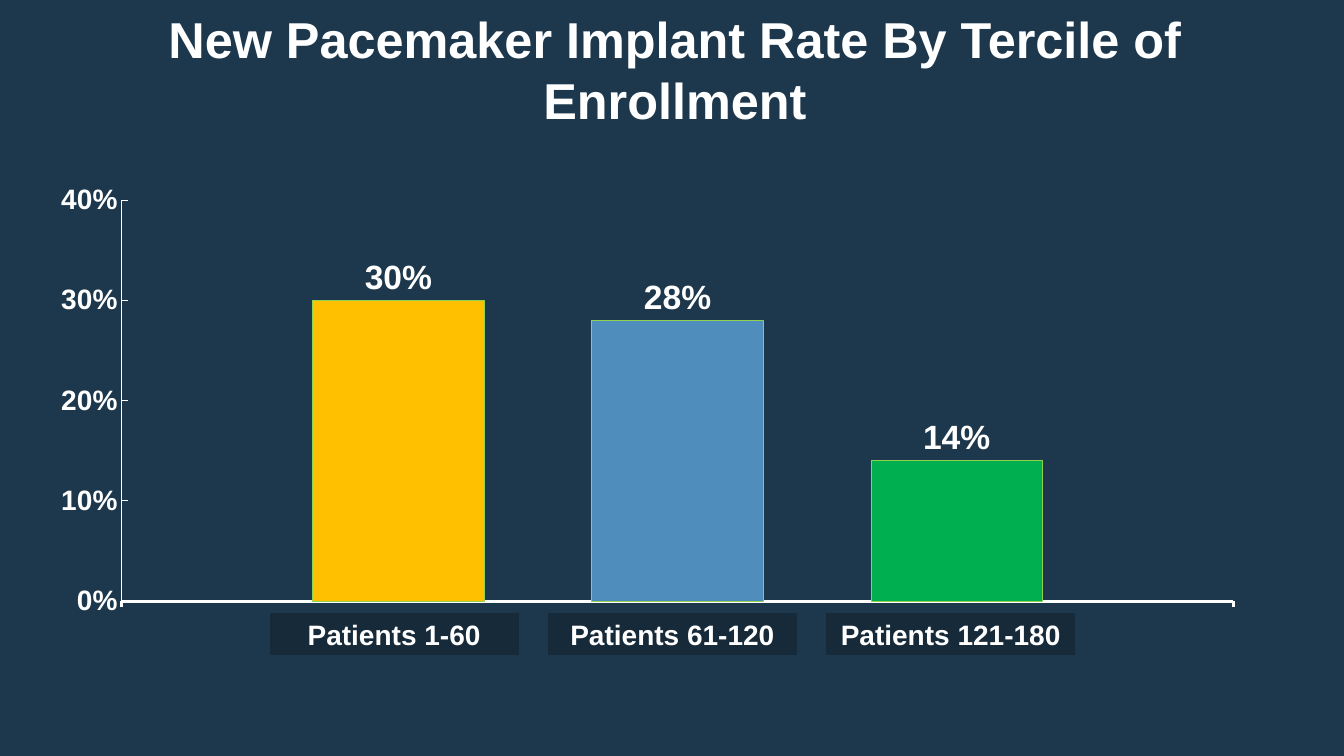
from lxml import etree
from pptx import Presentation
from pptx.chart import data
from pptx.dml import color
from pptx.enum import chart as ch, shapes, text
from pptx.oxml import ns
from pptx.util import Inches, Pt

TERCILES = [
    ("Patients 1-60", 0.30, "FFC000"),
    ("Patients 61-120", 0.28, "4F8EBC"),
    ("Patients 121-180", 0.14, "00B050"),
]


def rgb(value):
    return color.RGBColor.from_string(value)


class Deck:
    """Holds the slide and its style, and draws each kind of element."""

    font_name = "Arial"
    ink = "FFFFFF"
    ground = "1D384C"
    label_fill = "162A39"
    bar_edge = "92D050"

    def __init__(self):
        self.prs = Presentation()
        self.prs.slide_width = Inches(13.33)
        self.prs.slide_height = Inches(7.5)
        self.slide = self.prs.slides.add_slide(self.prs.slide_layouts[6])
        background = self.slide.background.fill
        background.solid()
        background.fore_color.rgb = rgb(self.ground)

    def style(self, font, size):
        font.name = self.font_name
        font.size = Pt(size)
        font.bold = True
        font.color.rgb = rgb(self.ink)

    def outline(self, line, hex_color, width):
        line.color.rgb = rgb(hex_color)
        line.width = Pt(width)

    def add_words(self, frame, words, size):
        frame.word_wrap = True
        frame.vertical_anchor = text.MSO_ANCHOR.MIDDLE
        paragraph = frame.paragraphs[0]
        paragraph.alignment = text.PP_ALIGN.CENTER
        run = paragraph.add_run()
        run.text = words
        self.style(run.font, size)

    def title(self, words, left, top, width, height):
        heading = self.slide.shapes.add_textbox(
            Inches(left), Inches(top), Inches(width), Inches(height))
        frame = heading.text_frame
        frame.margin_left = frame.margin_right = 0
        frame.margin_top = frame.margin_bottom = 0
        self.add_words(frame, words, 36)

    def label(self, words, left, top, width, height):
        tercile = self.slide.shapes.add_shape(
            shapes.MSO_SHAPE.RECTANGLE,
            Inches(left), Inches(top), Inches(width), Inches(height))
        tercile.shadow.inherit = False
        tercile.fill.solid()
        tercile.fill.fore_color.rgb = rgb(self.label_fill)
        self.outline(tercile.line, self.ground, 2)
        self.add_words(tercile.text_frame, words, 20)

    def place_plot(self, chart, **box):
        area = chart._chartSpace.chart.plotArea
        for old in area.findall(ns.qn("c:layout")):
            area.remove(old)
        layout = etree.Element(ns.qn("c:layout"))
        manual = etree.SubElement(layout, ns.qn("c:manualLayout"))
        settings = {"layoutTarget": "inner", "xMode": "edge", "yMode": "edge", **box}
        for tag, value in settings.items():
            etree.SubElement(manual, ns.qn(f"c:{tag}")).set("val", str(value))
        area.insert(0, layout)

    def rate_chart(self, terciles, left, top, width, height):
        rates = data.CategoryChartData(number_format="0%")
        rates.categories = [""]
        for number, (_, rate, _) in enumerate(terciles, 1):
            rates.add_series(f"Series {number}", [rate])
        chart = self.slide.shapes.add_chart(
            ch.XL_CHART_TYPE.COLUMN_CLUSTERED, Inches(left), Inches(top),
            Inches(width), Inches(height), rates).chart
        chart.has_legend = False
        chart.has_title = False
        self.style(chart.font, 10)
        self.place_plot(chart, x=0.07, y=0.146, w=0.868, h=0.671)

        baseline = chart.category_axis
        baseline.tick_label_position = ch.XL_TICK_LABEL_POSITION.NONE
        baseline.major_tick_mark = ch.XL_TICK_MARK.OUTSIDE
        self.outline(baseline.format.line, self.ink, 2)

        scale = chart.value_axis
        scale.minimum_scale, scale.maximum_scale, scale.major_unit = 0, 0.4, 0.1
        scale.has_major_gridlines = False
        scale.major_tick_mark = ch.XL_TICK_MARK.INSIDE
        scale.tick_labels.number_format = "0%"
        scale.tick_labels.number_format_is_linked = False
        self.style(scale.tick_labels.font, 20)
        self.outline(scale.format.line, self.ink, 0.75)

        plot = chart.plots[0]
        plot.gap_width, plot.overlap = 223, -63
        plot.vary_by_categories = False
        for bar, (_, _, fill) in zip(plot.series, terciles):
            bar.format.fill.solid()
            bar.format.fill.fore_color.rgb = rgb(fill)
            self.outline(bar.format.line, self.bar_edge, 0.75)
            values = bar.data_labels
            values.show_value = True
            values.number_format = "0%"
            values.number_format_is_linked = False
            values.position = ch.XL_LABEL_POSITION.OUTSIDE_END
            self.style(values.font, 24)


def main():
    deck = Deck()
    deck.rate_chart(TERCILES, 0.32, 1.12, 12.7, 5.93)
    deck.title("New Pacemaker Implant Rate By Tercile of Enrollment",
               1, 0.4, 11.39, 0.57)
    for column, (patients, _, _) in enumerate(TERCILES):
        deck.label(patients, 2.66 + column * 2.76, 6.07, 2.5, 0.44)
    deck.prs.save("out.pptx")


if __name__ == "__main__":
    main()
